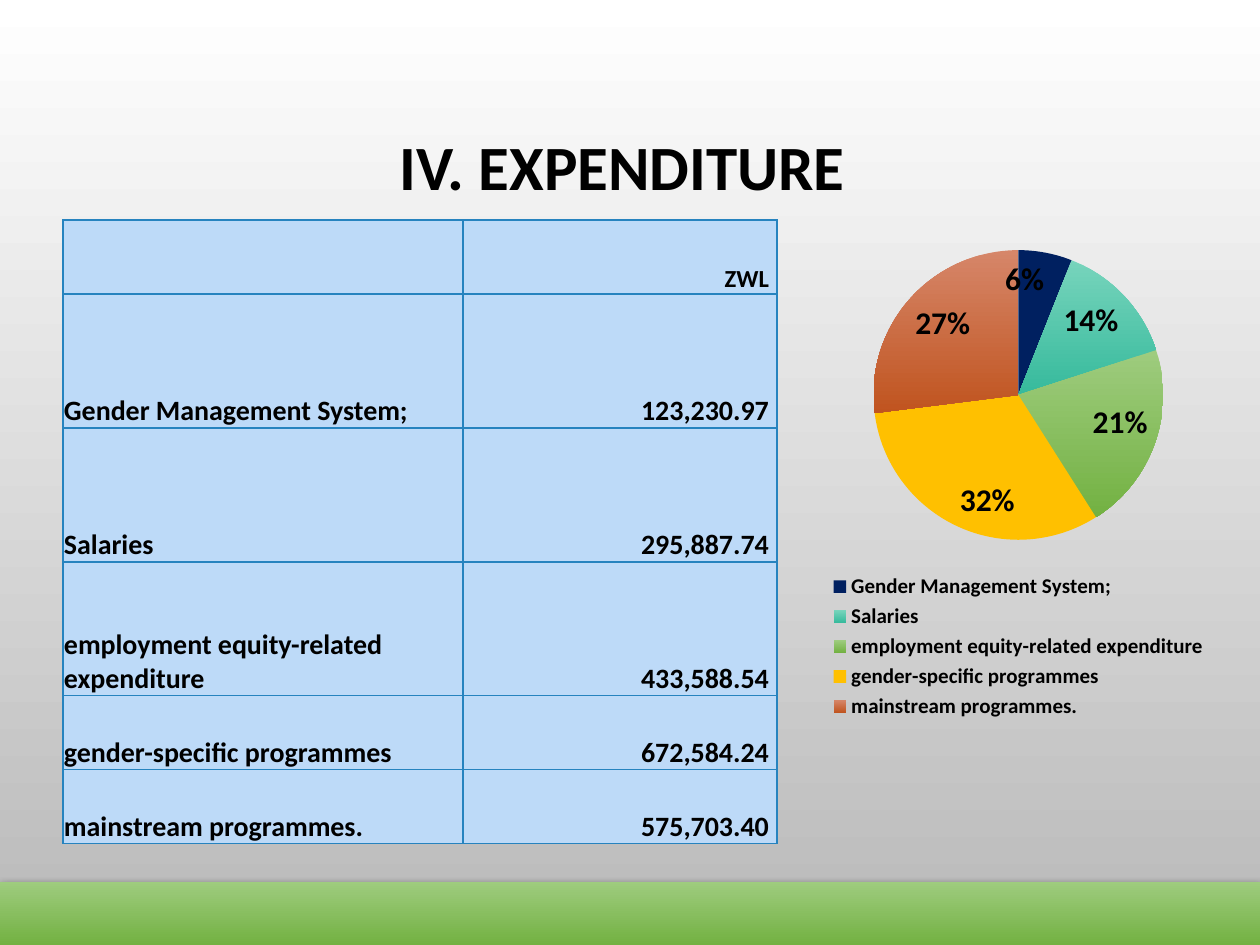
from lxml.etree import SubElement
from pptx import Presentation
from pptx.chart.data import CategoryChartData
from pptx.dml.color import RGBColor
from pptx.enum.chart import XL_CHART_TYPE, XL_LABEL_POSITION, XL_LEGEND_POSITION
from pptx.enum.shapes import MSO_SHAPE
from pptx.enum.text import MSO_ANCHOR, PP_ALIGN
from pptx.oxml import parse_xml
from pptx.oxml.ns import nsdecls, qn
from pptx.util import Pt

SCALE = 914400 / 126
GREEN = ("9ECC7E", "73B142")
EXPENSES = [
    ("Gender Management System;", "123,230.97", 6, ("002060",)),
    ("Salaries", "295,887.74", 14, ("77D4BC", "36BA9C")),
    ("employment equity-related expenditure", "433,588.54", 21, GREEN),
    ("gender-specific programmes", "672,584.24", 32, ("FFC000",)),
    ("mainstream programmes.", "575,703.40", 27, ("D68669", "C0541F")),
]


def px(value):
    return round(value * SCALE)


def color(value):
    return RGBColor.from_string(value)


class Builder:
    font_name = "Calibri"
    ink = "000000"
    cell_fill = "BDDAF8"
    border = "2683BF"

    def __init__(self, page):
        self.page = page

    def style(self, font, size):
        font.name = self.font_name
        font.size = Pt(size)
        font.bold = True
        font.color.rgb = color(self.ink)

    def paint(self, fill, colors):
        if len(colors) == 1:
            fill.solid()
            fill.fore_color.rgb = color(colors[0])
            return
        fill.gradient()
        fill.gradient_angle = 270
        for stop, value in zip(fill.gradient_stops, colors):
            stop.color.rgb = color(value)

    def background(self, colors):
        self.paint(self.page.background.fill, colors)

    def title(self, text, left, top, width, height):
        box = self.page.shapes.title
        box.left, box.top, box.width, box.height = map(px, (left, top, width, height))
        frame = box.text_frame
        frame.text = text
        frame.word_wrap = True
        frame.vertical_anchor = MSO_ANCHOR.MIDDLE
        frame.margin_right = px(28)
        frame.margin_bottom = px(72)
        para = frame.paragraphs[0]
        para.alignment = PP_ALIGN.CENTER
        para.line_spacing = 1.07
        self.style(para.runs[0].font, 36)

    def bar(self, colors, left, top, width, height):
        bar = self.page.shapes.add_shape(MSO_SHAPE.RECTANGLE, *map(px, (left, top, width, height)))
        self.paint(bar.fill, colors)
        bar.line.fill.background()
        bar._element.spPr.append(parse_xml(
            f'<a:effectLst {nsdecls("a")}><a:outerShdw blurRad="63500" dist="25400" dir="5400000" '
            'rotWithShape="0"><a:srgbClr val="000000"><a:alpha val="69000"/></a:srgbClr>'
            '</a:outerShdw></a:effectLst>'))

    def cell(self, cell, text, size, alignment, margin_right):
        properties = cell._tc.get_or_add_tcPr()
        for side in ("lnL", "lnR", "lnT", "lnB"):
            line = SubElement(properties, qn(f"a:{side}"), w=str(Pt(0.75)))
            SubElement(SubElement(line, qn("a:solidFill")), qn("a:srgbClr"), val=self.border)
        self.paint(cell.fill, (self.cell_fill,))
        cell.vertical_anchor = MSO_ANCHOR.BOTTOM
        cell.margin_left = cell.margin_top = px(1)
        cell.margin_right = px(margin_right)
        cell.margin_bottom = 0
        cell.text = text
        para = cell.text_frame.paragraphs[0]
        para.alignment = alignment
        self.style(para.font, size)
        for span in para.runs:
            self.style(span.font, size)

    def table(self, rows, left, top, widths, heights):
        table = self.page.shapes.add_table(
            len(rows), len(widths), px(left), px(top), px(sum(widths)), px(sum(heights))).table
        table.first_row = table.horz_banding = False
        for column, width in zip(table.columns, widths):
            column.width = px(width)
        for index, (label, amount) in enumerate(rows):
            table.rows[index].height = px(heights[index])
            size = 16 if index else 14
            self.cell(table.cell(index, 0), label, size, PP_ALIGN.LEFT, 1)
            self.cell(table.cell(index, 1), amount, size, PP_ALIGN.RIGHT, 8)

    def pie(self, items, left, top, width, height):
        data = CategoryChartData()
        data.categories = [label for label, _, _, _ in items]
        data.add_series("Series 1", [share for _, _, share, _ in items])
        chart = self.page.shapes.add_chart(
            XL_CHART_TYPE.PIE, *map(px, (left, top, width, height)), data).chart
        chart.has_title = False
        self.style(chart.font, 10)
        chart.has_legend = True
        chart.legend.position = XL_LEGEND_POSITION.BOTTOM
        chart.legend.include_in_layout = False
        self.style(chart.legend.font, 12)
        plot = chart.plots[0]
        plot.vary_by_categories = True
        for index, (_, _, _, colors) in enumerate(items):
            self.paint(plot.series[0].points[index].format.fill, colors)
        plot.has_data_labels = True
        labels = plot.data_labels
        labels.show_percentage = True
        labels.show_value = False
        labels.number_format = "0%"
        labels.number_format_is_linked = False
        labels.position = XL_LABEL_POSITION.INSIDE_END
        self.style(labels.font, 18)
        area = chart._chartSpace.chart.plotArea
        for layout in area.findall(qn("c:layout")):
            area.remove(layout)
        area.insert(0, parse_xml(
            f'<c:layout {nsdecls("c")}><c:manualLayout><c:layoutTarget val="inner"/>'
            '<c:xMode val="edge"/><c:yMode val="edge"/><c:x val="0.2"/><c:y val="0.03"/>'
            '<c:w val="0.6"/><c:h val="0.6"/></c:manualLayout></c:layout>'))


def main():
    deck = Presentation()
    deck.slide_width, deck.slide_height = px(1260), px(945)
    builder = Builder(deck.slides.add_slide(deck.slide_layouts[5]))
    builder.background(("FFFFFF", "B9B9B9"))
    builder.title("IV. EXPENDITURE", 94, 86, 1072, 220)
    builder.pie(EXPENSES, 777, 233, 483, 491)
    builder.bar(GREEN, 0, 882, 1260, 63)
    rows = [("", "ZWL")] + [(label, amount) for label, amount, _, _ in EXPENSES]
    builder.table(rows, 63, 220, (400, 314), (74, 134, 134, 134, 74, 74))
    deck.save("out.pptx")


if __name__ == "__main__":
    main()
